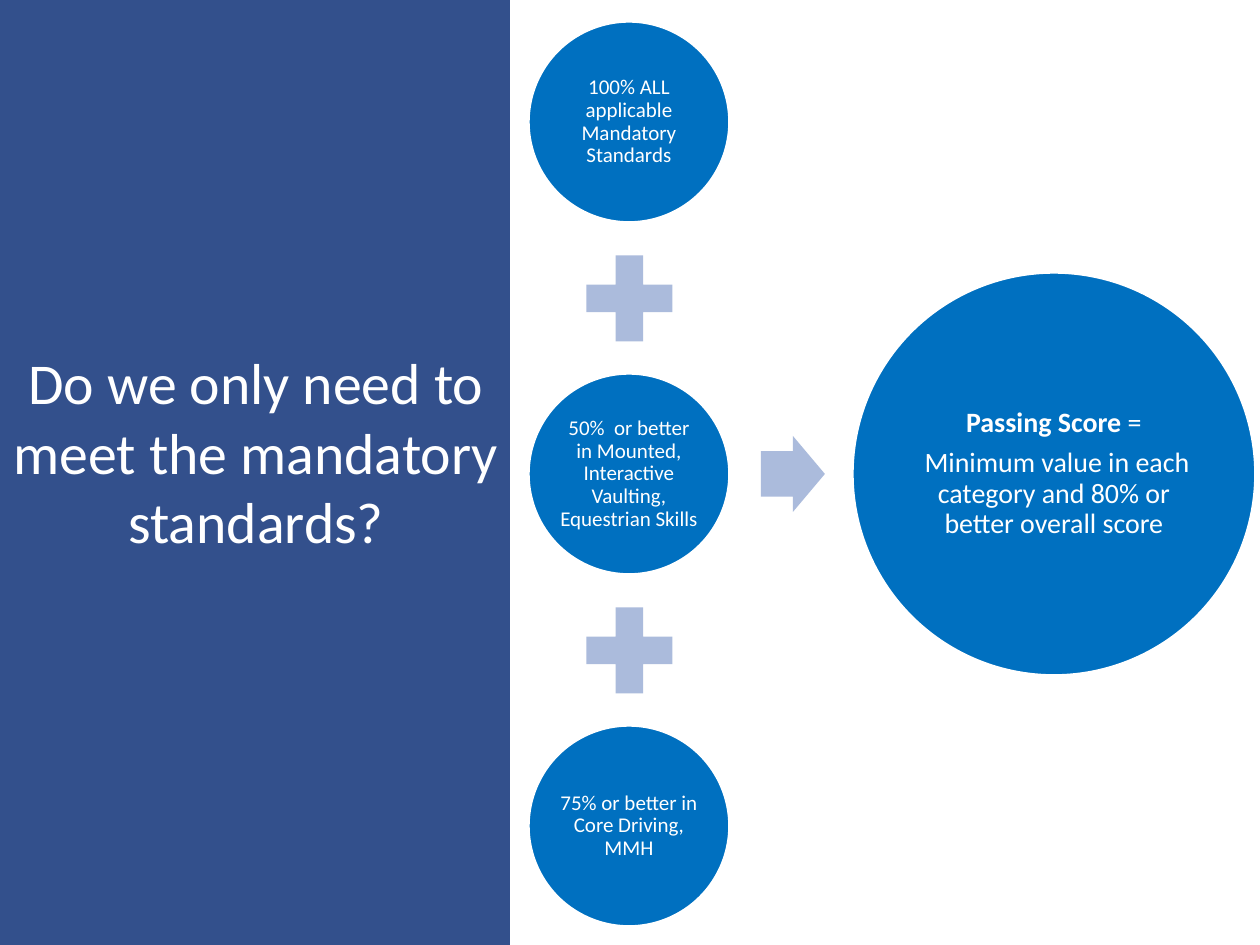
from lxml import etree
from pptx import Presentation
from pptx.dml.color import RGBColor
from pptx.enum.shapes import MSO_SHAPE
from pptx.enum.text import MSO_ANCHOR, MSO_AUTO_SIZE, PP_ALIGN
from pptx.oxml.ns import qn
from pptx.util import Pt

PX = 914400 // 126
RECTANGLE, CIRCLE = MSO_SHAPE.RECTANGLE, MSO_SHAPE.OVAL
PLUS, ARROW = MSO_SHAPE.MATH_PLUS, MSO_SHAPE.RIGHT_ARROW
MIDDLE, CENTER, NO_FIT = MSO_ANCHOR.MIDDLE, PP_ALIGN.CENTER, MSO_AUTO_SIZE.NONE
COLORS = {"panel": "002570", "circle": "0070C0", "symbol": "ABBBDC", "white": "FFFFFF"}
FONT = "Calibri"


def add_centered(kind, center_x, center_y, width, height, color):
    """Add a borderless shape given by its centre and size in px."""
    shape = slide.shapes.add_shape(
        kind, (center_x - width // 2) * PX, (center_y - height // 2) * PX,
        width * PX, height * PX)
    shape.shadow.inherit = False
    shape.fill.solid()
    shape.fill.fore_color.rgb = RGBColor.from_string(COLORS[color])
    shape.line.fill.background()
    return shape


def add_circle(center_x, center_y, diameter, lines, size):
    """Add a white-rimmed circle with one paragraph per line of text."""
    circle = add_centered(CIRCLE, center_x, center_y, diameter, diameter, "circle")
    circle.line.color.rgb = RGBColor.from_string(COLORS["white"])
    circle.line.width = Pt(2)
    frame = circle.text_frame
    frame.text = "\n".join(lines)
    frame.word_wrap = True
    frame.vertical_anchor = MIDDLE
    frame.margin_left = frame.margin_right = 2 * PX
    frame.margin_top = frame.margin_bottom = 2 * PX
    for para in frame.paragraphs:
        para.alignment = CENTER
        para.line_spacing = 0.9
        para.space_after = Pt(0.35 * size)
        para.font.name = FONT
        para.font.size = Pt(size)
        para.font.color.rgb = RGBColor.from_string(COLORS["white"])
    return circle


deck = Presentation()
deck.slide_width, deck.slide_height = 1260 * PX, 945 * PX
slide = deck.slides.add_slide(deck.slide_layouts[5])

# Side panel with the question
panel = add_centered(RECTANGLE, 255, 472, 510, 945, "panel")
panel.top = 0
panel_color = panel.fill._xPr.find(qn("a:solidFill"))[0]
etree.SubElement(panel_color, qn("a:alpha"), val="80000")

title = slide.shapes.title
panel._element.addnext(title._element)
title.left, title.top, title.width, title.height = 0, 69 * PX, 512 * PX, 764 * PX
title.text_frame.text = "Do we only need to meet the mandatory standards?"
title.text_frame.word_wrap = True
title.text_frame.auto_size = NO_FIT
title.text_frame.vertical_anchor = MIDDLE
title_para = title.text_frame.paragraphs[0]
title_para.alignment = CENTER
title_para.font.name = FONT
title_para.font.size = Pt(33)
title_para.font.color.rgb = RGBColor.from_string(COLORS["white"])

# Column of requirements joined by plus signs
requirements = [
    "100% ALL applicable Mandatory Standards",
    "50%  or better in Mounted, Interactive Vaulting, Equestrian Skills",
    "75% or better in Core Driving, MMH",
]
column_x, first_y, step, middle_y = 629, 122, 352, 474
for index, requirement in enumerate(requirements):
    center_y = first_y + index * step
    if index:
        add_centered(PLUS, column_x, center_y - step // 2, 117, 117, "symbol")
    add_circle(column_x, center_y, 202, [requirement], 12)

# Result
arrow = add_centered(ARROW, 793, middle_y, 64, 76, "symbol")
arrow.adjustments[0], arrow.adjustments[1] = 0.6, 0.5
result = add_circle(1054, middle_y, 404, [
    "Passing Score ",
    " Minimum value in each category and 80% or better overall score",
], 16)
heading = result.text_frame.paragraphs[0]
heading.runs[0].font.bold = True
heading.add_run().text = "="

# Run-level formatting for every text on the slide
for shape in slide.shapes:
    for para in shape.text_frame.paragraphs:
        for span in para.runs:
            span.font.name = FONT
            span.font.size = para.font.size
            span.font.color.rgb = RGBColor.from_string(COLORS["white"])

deck.save("out.pptx")
